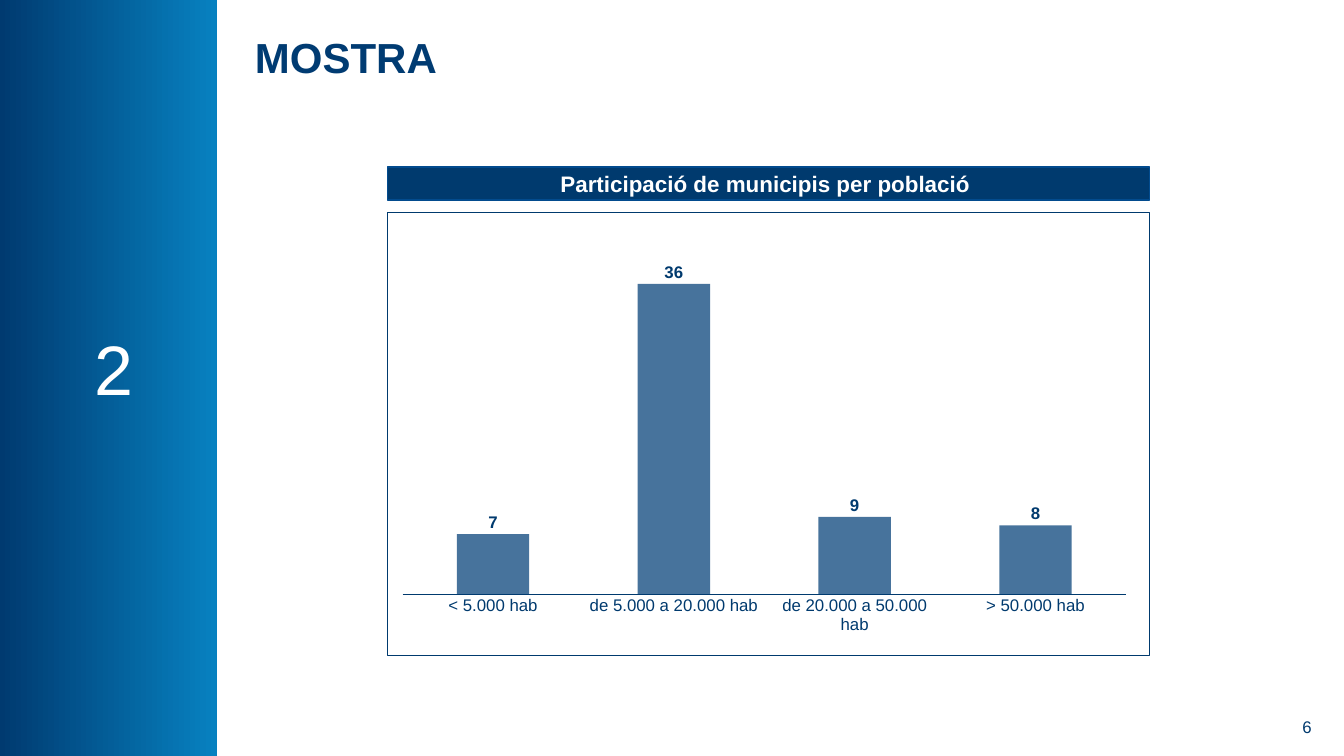
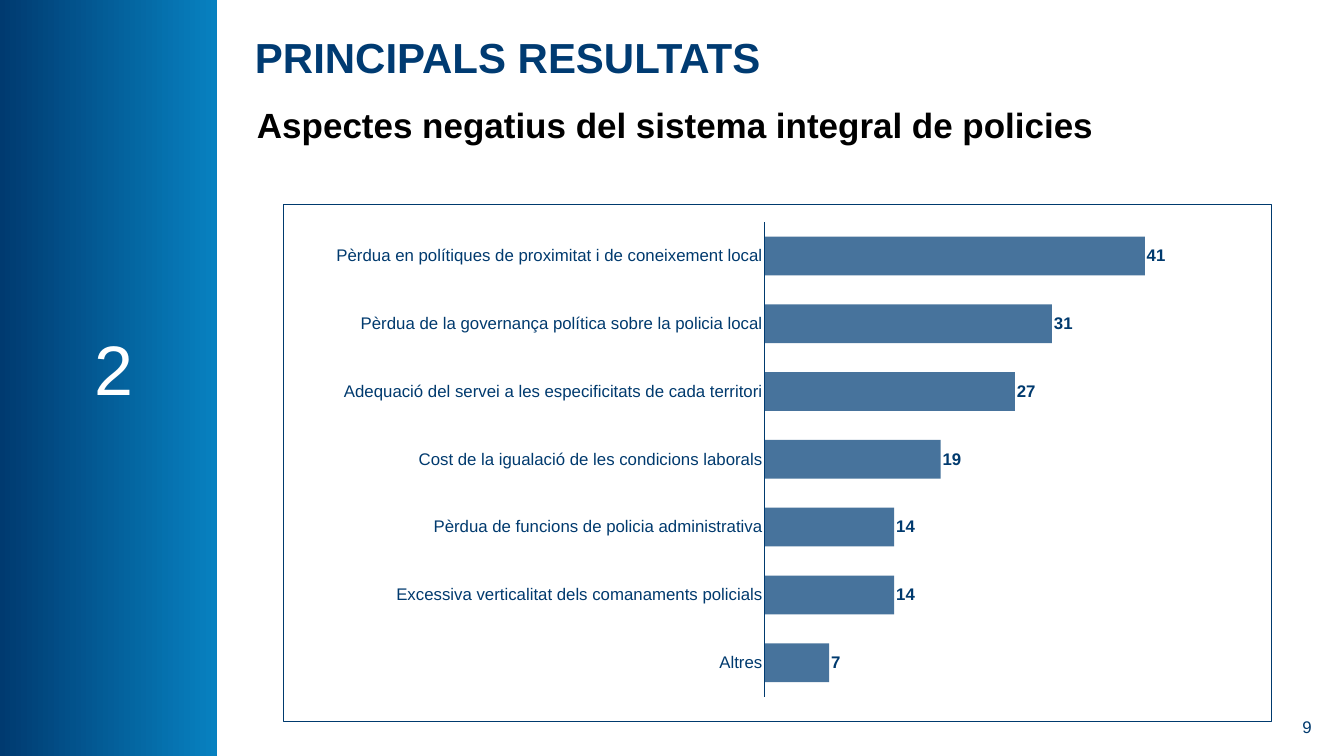
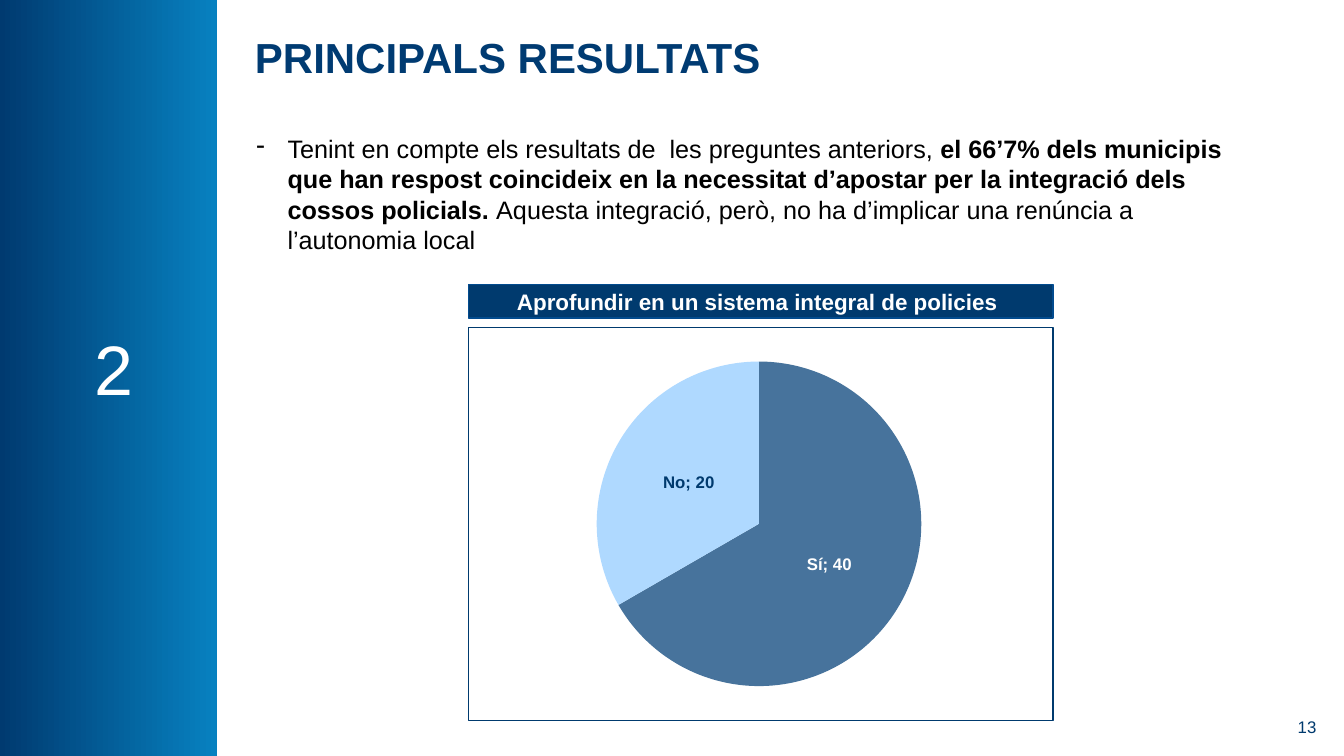
from dataclasses import dataclass

from lxml import etree
from pptx import Presentation
from pptx.chart.data import CategoryChartData
from pptx.dml.color import RGBColor
from pptx.enum.chart import XL_CHART_TYPE, XL_LABEL_POSITION, XL_TICK_MARK
from pptx.enum.shapes import MSO_SHAPE
from pptx.enum.text import MSO_ANCHOR, PP_ALIGN
from pptx.oxml.ns import qn
from pptx.util import Cm, Pt

COLUMN, BAR, PIE = (XL_CHART_TYPE.COLUMN_CLUSTERED, XL_CHART_TYPE.BAR_CLUSTERED,
                    XL_CHART_TYPE.PIE)
OUTSIDE, INSIDE = XL_LABEL_POSITION.OUTSIDE_END, XL_LABEL_POSITION.CENTER
NO_TICK = XL_TICK_MARK.NONE
RECT = MSO_SHAPE.RECTANGLE
TOP, MIDDLE = MSO_ANCHOR.TOP, MSO_ANCHOR.MIDDLE
LEFT, CENTER = PP_ALIGN.LEFT, PP_ALIGN.CENTER


@dataclass(frozen=True)
class Theme:
    font: str = "Arial"
    # Colours
    navy: str = "003A6E"
    title: str = "003B72"
    band_start: str = "003A70"
    band_end: str = "0781C0"
    edge: str = "024B8E"
    bar: str = "003E76"
    bar_alpha: int = 72
    pale: str = "AFD9FF"
    white: str = "FFFFFF"
    black: str = "000000"
    # Type sizes
    section_size: int = 100
    title_size: int = 60
    subtitle_size: int = 50
    body_size: int = 36
    heading_size: int = 32
    small_size: int = 24


THEME = Theme()


def rgb(color):
    return RGBColor.from_string(color)


def box(left, top, width, height):
    return Cm(left), Cm(top), Cm(width), Cm(height)


def set_font(font, size, color, bold=False):
    font.name, font.size, font.bold = THEME.font, Pt(size), bold
    font.color.rgb = rgb(color)


# Text and shapes
def add_runs(p, runs, size, color):
    for text, bold in runs:
        r = p.add_run()
        r.text = text
        set_font(r.font, size, color, bold)


def add_text(slide, place, runs, size, color, align=LEFT, anchor=TOP, inset=None):
    tf = slide.shapes.add_textbox(*box(*place)).text_frame
    tf.word_wrap = True
    tf.vertical_anchor = anchor
    if inset is not None:
        tf.margin_left = tf.margin_right = tf.margin_top = tf.margin_bottom = Cm(inset)
    p = tf.paragraphs[0]
    p.alignment = align
    add_runs(p, runs, size, color)
    return p


def set_indent(p, left, first):
    pPr = p._p.get_or_add_pPr()
    pPr.set("marL", str(Cm(left)))
    pPr.set("indent", str(Cm(first)))
    return pPr


def add_dash_item(slide, place, runs):
    p = add_text(slide, place, runs, THEME.body_size, THEME.black)
    pPr = set_indent(p, 1.57, -1.57)
    color = etree.SubElement(pPr, qn("a:buClr"))
    etree.SubElement(color, qn("a:srgbClr"), val=THEME.black)
    etree.SubElement(pPr, qn("a:buChar"), char="-")


def add_rect(slide, place, line=None):
    sp = slide.shapes.add_shape(RECT, *box(*place))
    sp.shadow.inherit = False
    if line:
        sp.line.color.rgb = rgb(line)
        sp.line.width = Pt(2)
    else:
        sp.line.fill.background()
    return sp


def add_heading(slide, place, text):
    sp = add_rect(slide, place, THEME.edge)
    sp.fill.solid()
    sp.fill.fore_color.rgb = rgb(THEME.navy)
    tf = sp.text_frame
    tf.word_wrap = True
    tf.vertical_anchor = MIDDLE
    p = tf.paragraphs[0]
    p.alignment = CENTER
    add_runs(p, [(text, True)], THEME.heading_size, THEME.white)


def add_frame(slide, place):
    add_rect(slide, place, THEME.navy).fill.background()


# Parts shared by every slide
def add_slide(prs, title, number, section="2"):
    slide = prs.slides.add_slide(prs.slide_layouts[6])
    fill = add_rect(slide, (-0.02, -0.02, 10.94, 38.14)).fill
    fill.gradient()
    fill.gradient_angle = 0
    for stop, color in zip(fill.gradient_stops, (THEME.band_start, THEME.band_end)):
        stop.color.rgb = rgb(color)

    p = add_text(slide, (4.17, 16.94, 2.54, 4.19), [(section, False)],
                 THEME.section_size, THEME.white, CENTER, MIDDLE, 0.13)
    p.line_spacing = 0.7
    set_indent(p, 1.27, -0.64)
    add_text(slide, (64.97, 35.99, 1.8, 1.32), [(str(number), False)],
             THEME.small_size, THEME.navy, CENTER, inset=0.15)
    add_text(slide, (12.7, 1.12, 51.1, 3.43), [(title, True)],
             THEME.title_size, THEME.title, anchor=MIDDLE, inset=0.15)
    return slide


# Charts
def set_plot_layout(chart, x, y, w, h):
    area = chart._chartSpace.chart.plotArea
    for old in area.findall(qn("c:layout")):
        area.remove(old)
    layout = etree.Element(qn("c:layout"))
    manual = etree.SubElement(layout, qn("c:manualLayout"))
    settings = dict(layoutTarget="inner", xMode="edge", yMode="edge", x=x, y=y, w=w, h=h)
    for tag, value in settings.items():
        etree.SubElement(manual, qn(f"c:{tag}"), val=str(value))
    area.insert(0, layout)


def fill_mark(fill, color, alpha=None):
    fill.solid()
    fill.fore_color.rgb = rgb(color)
    if alpha:
        for clr in fill._xPr.iter(qn("a:srgbClr")):
            etree.SubElement(clr, qn("a:alpha"), val=str(alpha * 1000))


def add_chart(slide, kind, place, layout, values):
    data = CategoryChartData()
    data.categories = list(values)
    data.add_series("Series 1", list(values.values()))
    chart = slide.shapes.add_chart(kind, *box(*place), data).chart
    chart.has_legend = chart.has_title = False
    set_font(chart.font, THEME.small_size, THEME.navy)
    set_plot_layout(chart, *layout)
    labels = chart.plots[0].series[0].data_labels
    labels.show_value = True
    labels.position = INSIDE if kind == PIE else OUTSIDE
    set_font(labels.font, THEME.small_size, THEME.navy, True)
    return chart


def add_bar_chart(slide, kind, place, layout, values, maximum, gap, overlap, axis_width):
    chart = add_chart(slide, kind, place, layout, values)
    plot = chart.plots[0]
    plot.vary_by_categories = False
    plot.gap_width, plot.overlap = gap, overlap
    fill_mark(plot.series[0].format.fill, THEME.bar, THEME.bar_alpha)

    axis = chart.category_axis
    axis.major_tick_mark = axis.minor_tick_mark = NO_TICK
    axis.format.line.color.rgb = rgb(THEME.navy)
    axis.format.line.width = Pt(axis_width)
    set_font(axis.tick_labels.font, THEME.small_size, THEME.navy)
    axis = chart.value_axis
    axis.visible = axis.has_major_gridlines = False
    axis.minimum_scale, axis.maximum_scale = 0, maximum


def add_pie_chart(slide, place, layout, values, slices):
    chart = add_chart(slide, PIE, place, layout, values)
    series = chart.plots[0].series[0]
    for i, (color, alpha, text_color) in enumerate(slices):
        point = series.points[i]
        fill_mark(point.format.fill, color, alpha)
        point.format.line.fill.background()
        set_font(point.data_label.font, THEME.small_size, text_color, True)
        point.data_label.position = INSIDE
    # Labels read "category; value"
    labels = series.data_labels._element
    for flag in labels.iter(qn("c:showCatName")):
        flag.set("val", "1")
    for flag in list(labels.iter(qn("c:showBubbleSize"))):
        separator = etree.Element(qn("c:separator"))
        separator.text = "; "
        flag.addnext(separator)


# Slides
def build_sample(prs):
    slide = add_slide(prs, "MOSTRA", 6)
    add_bar_chart(slide, COLUMN, (19.53, 12.17, 37.97, 20.22), (0.02, 0.02, 0.96, 0.86), {
        "< 5.000 hab": 7,
        "de 5.000 a 20.000 hab": 36,
        "de 20.000 a 50.000 hab": 9,
        "> 50.000 hab": 8,
    }, maximum=40, gap=150, overlap=0, axis_width=0.75)
    add_heading(slide, (19.53, 8.41, 38.4, 1.68), "Participació de municipis per població ")
    add_frame(slide, (19.53, 10.72, 38.4, 22.33))


def build_negatives(prs):
    slide = add_slide(prs, "PRINCIPALS RESULTATS", 9)
    add_text(slide, (12.7, 5.08, 43.1, 2.39),
             [("Aspectes negatius del sistema integral de policies", True)],
             THEME.subtitle_size, THEME.black)
    add_bar_chart(slide, BAR, (16.05, 10.69, 44.4, 24.92), (0.506, 0.02, 0.474, 0.96), {
        "Altres": 7,
        "Excessiva verticalitat dels comanaments policials": 14,
        "Pèrdua de funcions de policia administrativa": 14,
        "Cost de la igualació de les condicions laborals": 19,
        "Adequació del servei a les especificitats de cada territori": 27,
        "Pèrdua de la governança política sobre la policia local": 31,
        "Pèrdua en polítiques de proximitat i de coneixement local": 41,
    }, maximum=45, gap=75, overlap=-25, axis_width=0.25)
    add_frame(slide, (14.3, 10.31, 49.78, 26.06))


def build_integration(prs):
    slide = add_slide(prs, "PRINCIPALS RESULTATS", 13)
    add_dash_item(slide, (12.67, 6.6, 50.47, 6.4), [
        ("Tenint en compte els resultats de  les preguntes anteriors, ", False),
        ("el 66’7% dels municipis que han respost coincideix en la necessitat "
         "d’apostar per la integració dels cossos policials. ", True),
        ("Aquesta integració, però, no ha d’implicar una renúncia a l’autonomia local", False),
    ])
    add_pie_chart(slide, (24.1, 17.88, 28.3, 17.04), (0.21, 0.02, 0.58, 0.96),
                  {"Sí": 40, "No": 20},
                  [(THEME.bar, THEME.bar_alpha, THEME.white), (THEME.pale, None, THEME.navy)])
    add_heading(slide, (23.6, 14.35, 29.46, 1.68),
                "Aprofundir en un sistema integral de policies ")
    add_frame(slide, (23.6, 16.51, 29.46, 19.81))


def main():
    prs = Presentation()
    prs.slide_width, prs.slide_height = Cm(67.73), Cm(38.1)
    build_sample(prs)
    build_negatives(prs)
    build_integration(prs)
    prs.save("out.pptx")


if __name__ == "__main__":
    main()
